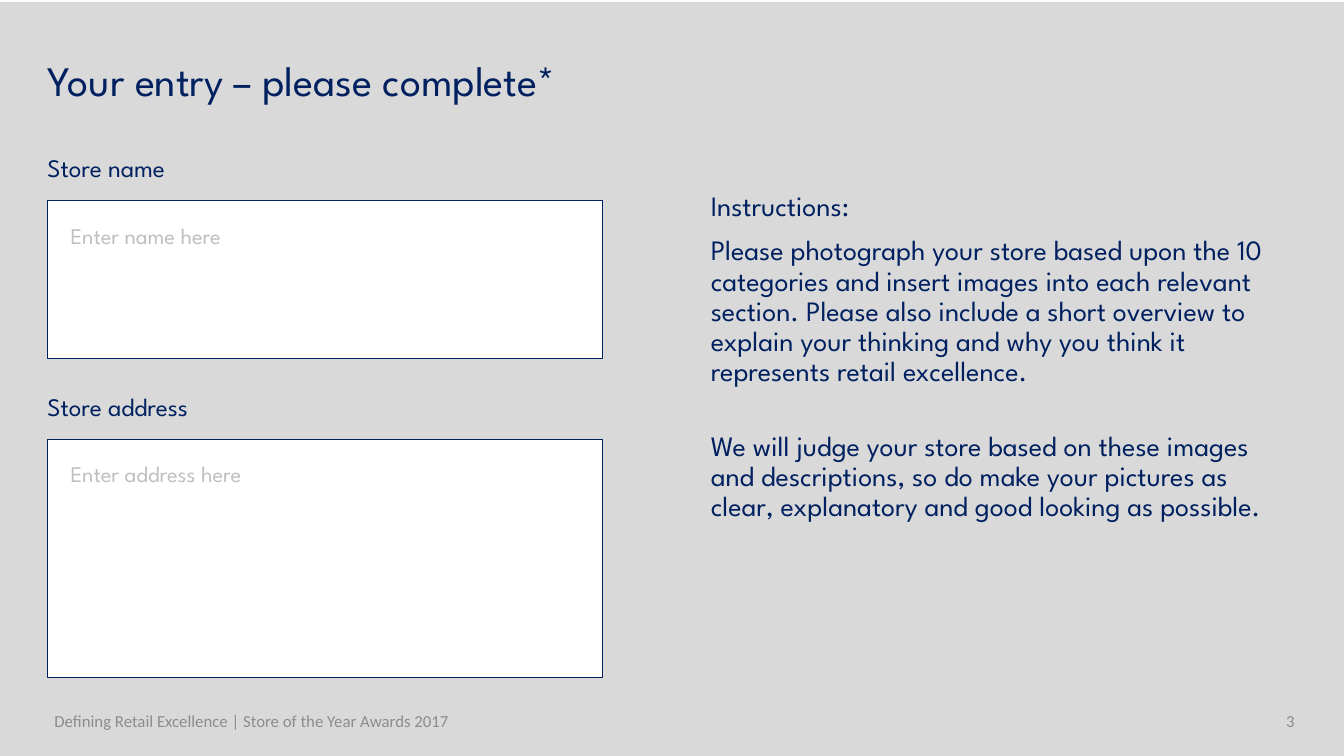
from pptx import Presentation, util as u
from pptx.dml.color import RGBColor
from pptx.enum import shapes, text

HUES = {"navy": "002060", "back": "D9D9D9", "white": "FFFFFF",
        "hint": "BFBFBF", "foot": "8C8C8C"}
SCALE = 9144
LEFT = 47


class Form:
    """Draws the parts of an entry form on one slide."""

    def __init__(self, deck):
        self.font = "League Spartan"
        self.slide = deck.slides.add_slide(deck.slide_layouts[6])

    def hue(self, name):
        return RGBColor.from_string(HUES[name])

    def rect(self, box, fill, line=None):
        shape = self.slide.shapes.add_shape(
            shapes.MSO_SHAPE.RECTANGLE, *[n * SCALE for n in box])
        shape.shadow.inherit = False
        shape.fill.solid()
        shape.fill.fore_color.rgb = self.hue(fill)
        if line:
            shape.line.color.rgb = self.hue(line)
            shape.line.width = u.Pt(0.75)
        else:
            shape.line.fill.background()

    def words(self, box, copy, size, hue="navy", pad=(0, 5, 10, 5),
              font=None, wrap=True):
        frame = self.slide.shapes.add_textbox(*[n * SCALE for n in box]).text_frame
        frame.word_wrap = wrap
        (frame.margin_left, frame.margin_top,
         frame.margin_right, frame.margin_bottom) = [n * SCALE for n in pad]
        frame.text = copy
        for para in frame.paragraphs:
            for run in para.runs:
                run.font.size = u.Pt(size)
                run.font.name = font or self.font
                run.font.color.rgb = self.hue(hue)
        return frame

    def field(self, top, tall, label, wide, hint):
        self.words((LEFT, top, wide, 40), label, 18, wrap=False)
        self.rect((LEFT, top + 53, 551, tall), "white", "navy")
        self.words((LEFT + 23, top + 69, 460, 37), hint, 16, "hint")

    def guide(self, box, copy, gaps):
        frame = self.words(box, "\n".join(copy), 20)
        for para, gap in zip(frame.paragraphs, gaps):
            para.line_spacing = 0.9
            if gap:
                para.space_before = u.Pt(gap)

    def foot(self, box, copy, pad, align):
        frame = self.words(box, copy, 12, "foot", pad, "Calibri")
        frame.vertical_anchor = text.MSO_ANCHOR.MIDDLE
        frame.paragraphs[0].alignment = align


def main():
    deck = Presentation()
    deck.slide_width, deck.slide_height = 1333 * SCALE, 750 * SCALE
    form = Form(deck)
    form.rect((0, 2, 1333, 750), "back")
    form.guide((705, 186, 577, 401), [
        "Instructions:",
        "Please photograph your store based upon the 10 categories and insert "
        "images into each relevant section. Please also include a short overview "
        "to explain your thinking and why you think it represents retail excellence.",
        "We will judge your store based on these images and descriptions, so do "
        "make your pictures as clear, explanatory and good looking as possible.",
    ], (0, 10, 31.6))
    form.foot((54, 695, 450, 40),
              "Defining Retail Excellence | Store of the Year Awards 2017",
              (0, 5, 0, 5), text.PP_ALIGN.LEFT)
    form.foot((984, 695, 300, 40), "3", (10, 5, 0, 5), text.PP_ALIGN.RIGHT)
    form.words((LEFT, 54, 648, 50), "Your entry – please complete*", 30,
               pad=(0, 0, 0, 0))
    form.field(146, 157, "Store name", 141, "Enter name here")
    form.field(383, 236, "Store address", 167, "Enter address here")
    deck.save("out.pptx")


if __name__ == "__main__":
    main()
